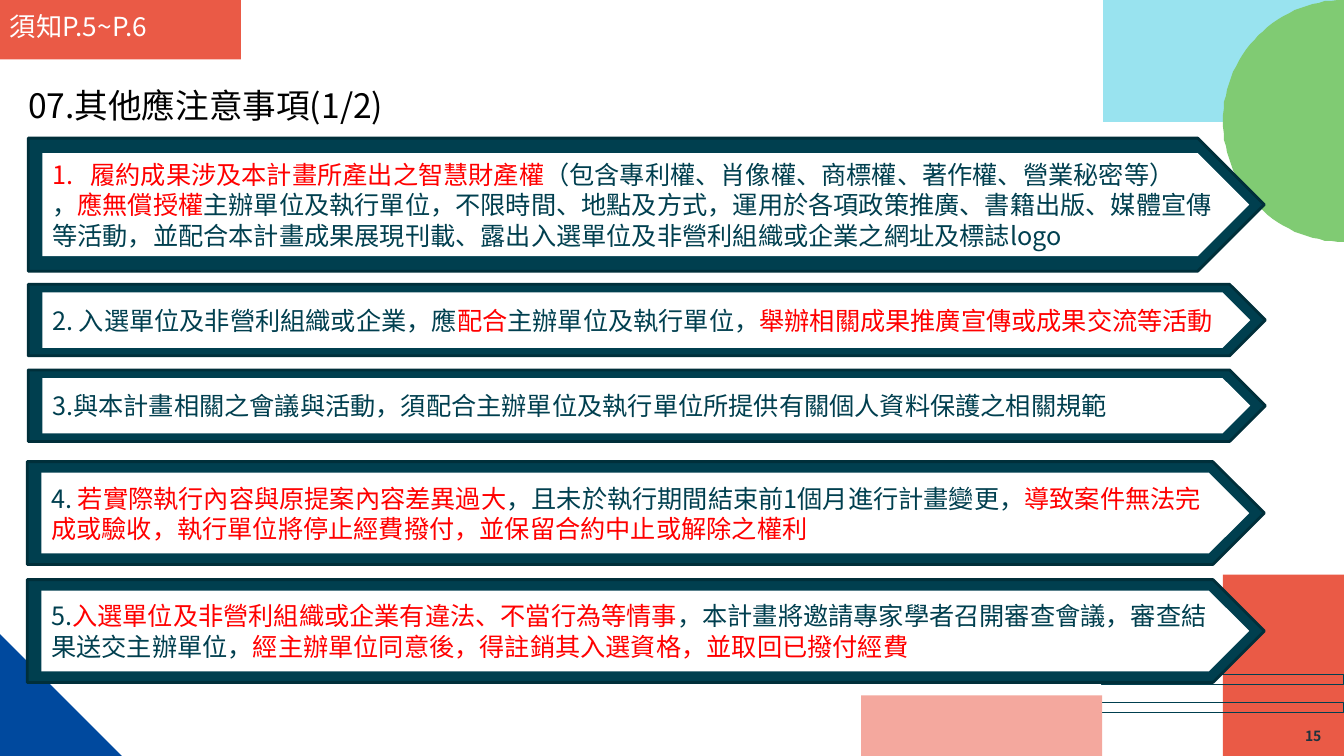
from dataclasses import dataclass
from math import cos, pi, sin

from lxml import etree
from pptx import Presentation
from pptx.dml.color import RGBColor
from pptx.enum.shapes import MSO_SHAPE
from pptx.enum.text import MSO_ANCHOR, PP_ALIGN
from pptx.oxml.ns import qn
from pptx.util import Pt

RECTANGLE = MSO_SHAPE.RECTANGLE
PENTAGON = MSO_SHAPE.PENTAGON
TOP, MIDDLE = MSO_ANCHOR.TOP, MSO_ANCHOR.MIDDLE
LEFT, CENTER = PP_ALIGN.LEFT, PP_ALIGN.CENTER
PX = 9144  # EMU in one px, 100 px to the inch


@dataclass(frozen=True)
class Theme:
    font: str = "Noto Sans CJK JP"
    number_font: str = "Noto Sans CJK TC"
    red: str = "EA5A46"
    cyan: str = "99E3EF"
    blue: str = "00499E"
    green: str = "80CB73"
    pink: str = "F4A89E"
    teal: str = "003F4F"
    teal_edge: str = "002F3A"
    white: str = "FFFFFF"
    black: str = "000000"
    number: str = "1F323D"
    accent: str = "FF0000"
    title_size: float = 24
    tag_size: float = 18.7
    body_size: float = 18
    number_size: float = 10
    body_leading: float = 21.7


class SlideBuilder:
    def __init__(self, slide, theme):
        self.slide = slide
        self.theme = theme

    def paint(self, shape, fill=None, line=None, width=0.75):
        shape.shadow.inherit = False
        if fill:
            shape.fill.solid()
            shape.fill.fore_color.rgb = RGBColor.from_string(fill)
        else:
            shape.fill.background()
        if line:
            shape.line.color.rgb = RGBColor.from_string(line)
            shape.line.width = Pt(width)
        else:
            shape.line.fill.background()

    def shape(self, kind, box, fill=None, line=None, width=0.75):
        shape = self.slide.shapes.add_shape(kind, *(value * PX for value in box))
        self.paint(shape, fill, line, width)
        return shape

    def outline(self, points, fill):
        builder = self.slide.shapes.build_freeform(*points[0], scale=PX)
        builder.add_line_segments(points[1:], close=True)
        self.paint(builder.convert_to_shape(), fill)

    def run(self, paragraph, text, size, color, font=None, bold=False):
        run = paragraph.add_run()
        run.text = text
        run.font.size = Pt(size)
        run.font.bold = bold
        run.font.name = font or self.theme.font
        run.font.color.rgb = RGBColor.from_string(color)
        east_asian = etree.SubElement(run.font._element, qn("a:ea"))
        east_asian.set("typeface", font or self.theme.font)

    def label(self, box, text, size, color, font=None, bold=False,
              align=LEFT, anchor=TOP):
        text_box = self.slide.shapes.add_textbox(*(value * PX for value in box))
        frame = text_box.text_frame
        frame.word_wrap = True
        frame.vertical_anchor = anchor
        paragraph = frame.paragraphs[0]
        paragraph.alignment = align
        self.run(paragraph, text, size, color, font, bold)

    def number_bullet(self, paragraph, indent):
        properties = paragraph._p.get_or_add_pPr()
        properties.set("marL", str(indent * PX))
        properties.set("indent", str(-indent * PX))
        bullet = etree.SubElement(properties, qn("a:buAutoNum"))
        bullet.set("type", "arabicPeriod")

    def notice(self, box, border, paragraphs, numbered=False):
        theme = self.theme
        left, top, width, height = box
        self.shape(PENTAGON, box, theme.teal, theme.teal_edge, 2)
        inner = (left + 14, top + border, width - 29, height - 2 * border)
        frame = self.shape(PENTAGON, inner, theme.white).text_frame
        frame.word_wrap = True
        frame.vertical_anchor = MIDDLE
        for index, runs in enumerate(paragraphs):
            paragraph = frame.add_paragraph() if index else frame.paragraphs[0]
            paragraph.alignment = LEFT
            paragraph.line_spacing = Pt(theme.body_leading)
            if numbered and index == 0:
                self.number_bullet(paragraph, 38)
            for text, color in runs:
                self.run(paragraph, text, theme.body_size, color)


THEME = Theme()
PLAIN, ACCENT = THEME.teal, THEME.accent

# Each notice: box, border thickness, paragraphs of (text, colour) runs
NOTICES = [
    ((28, 137, 1226, 132), 15, [
        [("履約成果涉及本計畫所產出之智慧財產權", ACCENT),
         ("（包含專利權、肖像權、商標權、著作權、營業秘密等）", PLAIN)],
        [("，", PLAIN), ("應無償授權", ACCENT),
         ("主辦單位及執行單位，不限時間、地點及方式，運用於各項政策推廣、書籍出版、"
          "媒體宣傳等活動，並配合本計畫成果展現刊載、露出入選單位及非營利組織或企業之"
          "網址及標誌logo", PLAIN)]]),
    ((28, 282, 1227, 71), 8, [
        [("2. 入選單位及非營利組織或企業，應", PLAIN), ("配合", ACCENT),
         ("主辦單位及執行單位，", PLAIN),
         ("舉辦相關成果推廣宣傳或成果交流等活動", ACCENT)]]),
    ((28, 367, 1227, 71), 8, [
        [("3.與本計畫相關之會議與活動，須配合主辦單位及執行單位所提供有關"
          "個人資料保護之相關規範", PLAIN)]]),
    ((27, 458, 1227, 102), 11, [
        [("4. ", PLAIN), ("若實際執行內容與原提案內容差異過大", ACCENT),
         ("，且未於執行期間結束前1個月進行計畫變更，", PLAIN),
         ("導致案件無法完成或驗收，執行單位將停止經費撥付，"
          "並保留合約中止或解除之權利", ACCENT)]]),
    ((27, 575, 1227, 102), 11, [
        [("5.", PLAIN),
         ("入選單位及非營利組織或企業有違法、不當行為等情事", ACCENT),
         ("，本計畫將邀請專家學者召開審查會議，審查結果送交主辦單位，", PLAIN),
         ("經主辦單位同意後，得註銷其入選資格，並取回已撥付經費", ACCENT)]]),
]


def main():
    presentation = Presentation()
    presentation.slide_width = 1333 * PX
    presentation.slide_height = 750 * PX
    slide = presentation.slides.add_slide(presentation.slide_layouts[6])
    builder = SlideBuilder(slide, THEME)

    # Corner decoration
    builder.shape(RECTANGLE, (0, 0, 239, 59), THEME.red)
    builder.shape(RECTANGLE, (1094, 0, 239, 121), THEME.cyan)
    builder.outline([(0, 629), (121, 750), (0, 750)], THEME.blue)
    radius, steps = 120, 60
    angles = [pi * step / steps for step in range(steps + 1)]
    half_circle = [(round(1333 - radius * sin(angle), 2),
                    round(radius - radius * cos(angle), 2)) for angle in angles]
    builder.outline(half_circle, THEME.green)
    builder.shape(RECTANGLE, (1213, 570, 120, 180), THEME.red)
    for top in (669, 697):
        builder.shape(RECTANGLE, (1093, top, 240, 10), line=THEME.teal)
    builder.shape(RECTANGLE, (854, 690, 239, 60), THEME.pink)

    # Page number and title
    builder.label((1282, 714, 41, 33), "15", THEME.number_size, THEME.number,
                  THEME.number_font, True, CENTER, MIDDLE)
    builder.label((18, 79, 431, 50), "07.其他應注意事項(1/2)",
                  THEME.title_size, THEME.black)

    # Notices
    for index, (box, border, paragraphs) in enumerate(NOTICES):
        builder.notice(box, border, paragraphs, numbered=index == 0)

    # Reference tag
    builder.label((0, 5, 209, 42), "須知P.5~P.6", THEME.tag_size, THEME.white)

    presentation.save("out.pptx")


if __name__ == "__main__":
    main()
